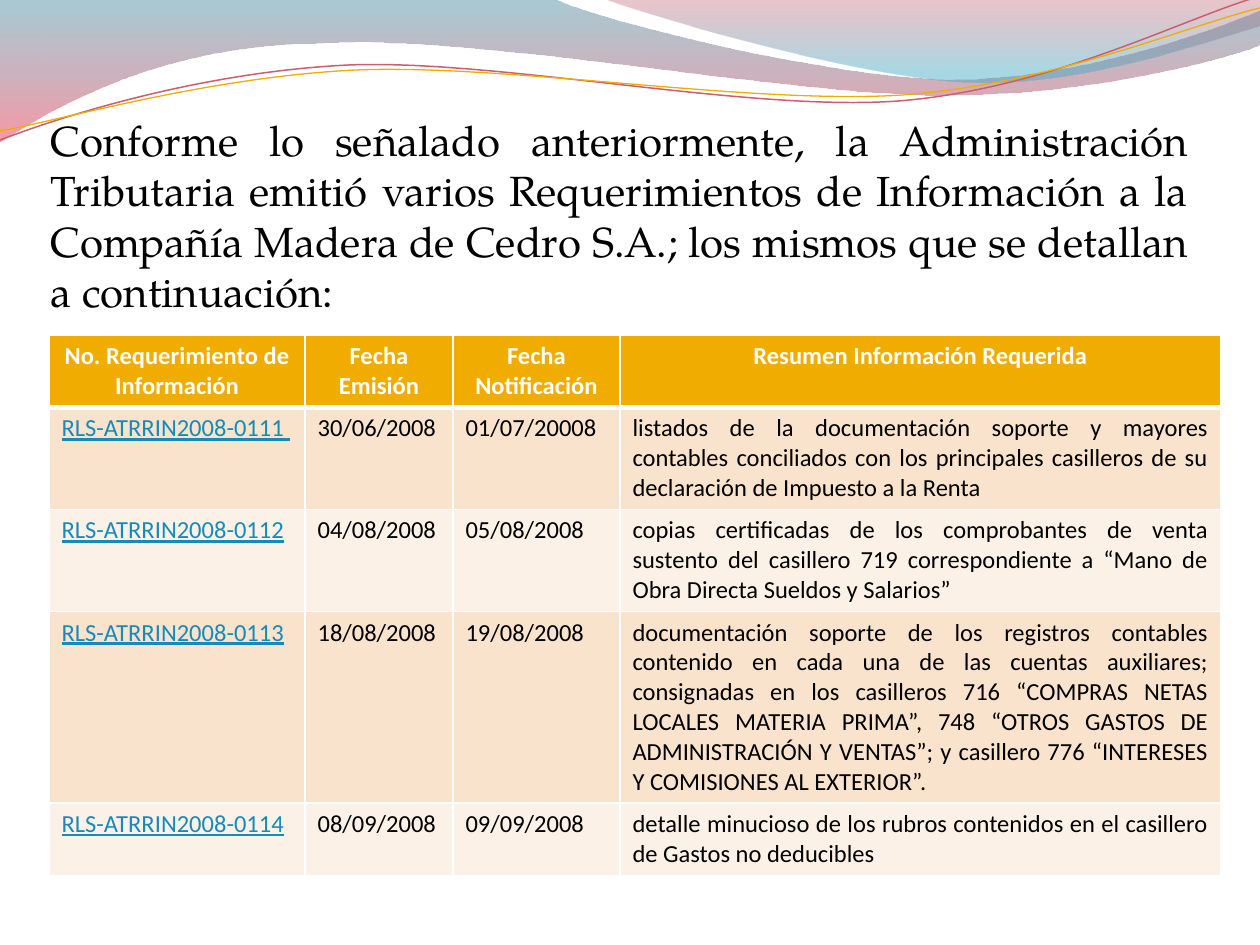
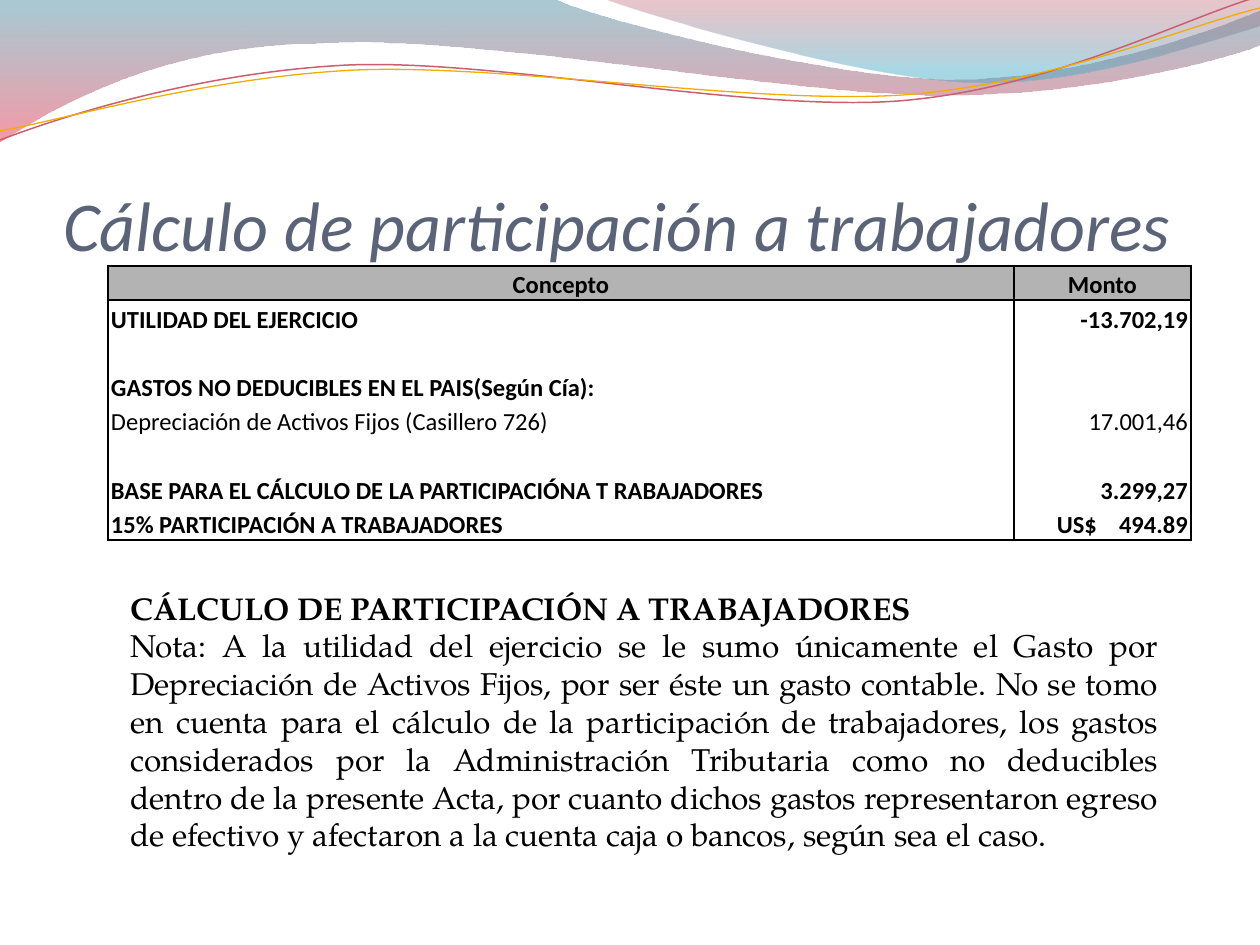
from lxml.etree import SubElement as Sub
from pptx import Presentation
from pptx.dml.color import RGBColor as Rgb
from pptx.enum.text import MSO_ANCHOR as Anc, MSO_AUTO_SIZE as Auto, PP_ALIGN as Al
from pptx.oxml.ns import qn
from pptx.util import Pt

PX = 914400 / 126
SANS, SERIF = "Calibri", "TeX Gyre Pagella"
HUES = {
    "black": "000000", "white": "FFFFFF", "slate": "5A6378", "gold": "F0AD00",
    "rose": "CB5F6E", "link": "168BBA", "odd": "F9E3CC", "even": "FCF1E7",
    "gray": "B3B3B3", "teal": "3F8A9F", "coral": "EF445B", "wine": "B84253",
    "aqua": "42ABC7",
}

# Waves: a pair is a straight step, six numbers are a curve
BANDS = [
    ([(0, -1), (554, -1), (600, 21, 837, 79, 955, 79), (1075, 79, 1207, 33, 1260, 11),
      (1261, 45), (1238, 55, 1096, 96, 940, 95), (784, 95, 481, 35, 324, 43),
      (163, 44, 58, 105, -1, 142)],
     [(0, "teal", 45), (1, "coral", 55)]),
    ([(604, -1), (641, 14, 859, 78, 969, 82), (1079, 87, 1211, 40, 1260, 26), (1260, 0)],
     [(0, "wine", 30), (0.8, "aqua", 45)]),
]
LINES = [
    ([(0, 140), (60, 117, 199, 72, 349, 65), (498, 59, 747, 112, 898, 101),
      (1050, 89, 1182, 19, 1257, -3)], "rose", 0.85),
    ([(0, 131), (59, 121, 207, 77, 357, 70), (508, 64, 752, 105, 903, 95),
      (1053, 84, 1186, 26, 1260, 8)], "gold", 0.75),
]

# Slide 1: requests for information
INTRO = ("Conforme lo señalado anteriormente, la Administración Tributaria emitió varios "
         "Requerimientos de Información a la Compañía Madera de Cedro S.A.; los mismos "
         "que se detallan a continuación:")
ASKS = [
    ("No. Requerimiento de Información", "Fecha Emisión", "Fecha Notificación",
     "Resumen Información Requerida"),
    ("RLS-ATRRIN2008-0111 ", "30/06/2008", "01/07/20008",
     "listados de la documentación soporte y mayores contables conciliados con los "
     "principales casilleros de su declaración de Impuesto a la Renta"),
    ("RLS-ATRRIN2008-0112", "04/08/2008", "05/08/2008",
     "copias certificadas de los comprobantes de venta sustento del casillero 719 "
     "correspondiente a “Mano de Obra Directa Sueldos y Salarios”"),
    ("RLS-ATRRIN2008-0113", "18/08/2008", "19/08/2008",
     "documentación soporte de los registros contables contenido en cada una de las "
     "cuentas auxiliares; consignadas en los casilleros 716 “COMPRAS NETAS LOCALES "
     "MATERIA PRIMA”, 748 “OTROS GASTOS DE ADMINISTRACIÓN Y VENTAS”; y casillero 776 "
     "“INTERESES Y COMISIONES AL EXTERIOR”."),
    ("RLS-ATRRIN2008-0114", "08/09/2008", "09/09/2008",
     "detalle minucioso de los rubros contenidos en el casillero de Gastos no deducibles"),
]

# Slide 2: workers' share
TITLE = "Cálculo de participación a trabajadores"
SUMS = [
    ("Concepto", "Monto"),
    ("UTILIDAD DEL EJERCICIO", "-13.702,19"),
    ("", ""),
    ("GASTOS NO DEDUCIBLES EN EL PAIS(Según Cía):", ""),
    ("Depreciación de Activos Fijos (Casillero 726)", "17.001,46"),
    ("", ""),
    ("BASE PARA EL CÁLCULO DE LA PARTICIPACIÓNA T RABAJADORES", "3.299,27"),
    ("15% PARTICIPACIÓN A TRABAJADORES", "US$    494.89"),
]
PLAIN = 4
HEAD = "CÁLCULO DE PARTICIPACIÓN A TRABAJADORES"
NOTE = ("Nota: A la utilidad del ejercicio se le sumo únicamente el Gasto por Depreciación "
        "de Activos Fijos, por ser éste un gasto contable. No se tomo en cuenta para el "
        "cálculo de la participación de trabajadores, los gastos considerados por la "
        "Administración Tributaria como no deducibles dentro de la presente Acta, por "
        "cuanto dichos gastos representaron egreso de efectivo y afectaron a la cuenta "
        "caja o bancos, según sea el caso.")


def emu(*nums):
    return [round(n * PX) for n in nums]


def hue(name):
    return Rgb.from_string(HUES[name])


def put(para, text, size=14, font=SANS, color="black", bold=False, ital=False,
        line=False, align=Al.LEFT, lead=None):
    para.alignment = align
    if lead:
        para.line_spacing = lead
    if not text:
        Sub(para._p, qn("a:endParaRPr"), sz=str(size * 100))
        return
    run = para.add_run()
    run.text = text
    face = run.font
    face.size, face.name, face.color.rgb = Pt(size), font, hue(color)
    face.bold, face.italic, face.underline = bold, ital, line


def place(shape, *box):
    shape.left, shape.top, shape.width, shape.height = emu(*box)
    frame = shape.text_frame
    frame.word_wrap, frame.auto_size = True, Auto.NONE
    return frame


# Shared waves
def wave(slide, steps, close):
    dots = [emu(*step[i:i + 2]) for step in steps for i in range(0, len(step), 2)]
    pen = slide.shapes.build_freeform(*dots[0])
    pen.add_line_segments(dots[1:], close=close)
    shape = pen.convert_to_shape()
    shape.shadow.inherit = False
    # Join the three points of each curved step into one Bézier segment
    legs = iter(list(shape.element.iter(qn("a:lnTo"))))
    for step in steps[1:]:
        leg = next(legs)
        if len(step) == 6:
            leg.tag = qn("a:cubicBezTo")
            for _ in range(2):
                spare = next(legs)
                leg.append(spare[0])
                spare.getparent().remove(spare)
    return shape


def band(slide, steps, stops):
    shape = wave(slide, steps, True)
    shape.line.fill.background()
    shape.fill.gradient()
    shape.fill.gradient_angle = 270
    for stop, (pos, name, _) in zip(shape.fill.gradient_stops, stops):
        stop.position, stop.color.rgb = pos, hue(name)
    for tint, (_, _, part) in zip(shape.element.iter(qn("a:srgbClr")), stops):
        Sub(tint, qn("a:alpha"), val=str(part * 1000))
    return shape


def curve(slide, steps, name, width):
    shape = wave(slide, steps, False)
    shape.fill.background()
    shape.line.color.rgb, shape.line.width = hue(name), Pt(width)
    return shape


def dress(master, slide):
    parts = [band(slide, *b) for b in BANDS] + [curve(slide, *c) for c in LINES]
    for i, part in enumerate(parts):
        part.element.nvSpPr.cNvPr.set("id", str(20 + i))
        master.shapes.element.insert(2 + i, part.element)


# Tables
def grid(slide, rows, left, top, cols, highs):
    box = emu(left, top, sum(cols), sum(highs))
    table = slide.shapes.add_table(len(rows), len(cols), *box).table
    for col, wide in zip(table.columns, emu(*cols)):
        col.width = wide
    for row, high in zip(table.rows, emu(*highs)):
        row.height = high
    return table


def edge(cell, color, **sides):
    tc = cell._tc.get_or_add_tcPr()
    for side in "LRTB":
        width = sides.get(side, 0)
        line = Sub(tc, qn("a:ln" + side), w=str(Pt(width)))
        if width:
            fill = Sub(line, qn("a:solidFill"))
            Sub(fill, qn("a:srgbClr"), val=HUES[color])
        else:
            Sub(line, qn("a:noFill"))


def paint(cell, name):
    cell.fill.solid()
    cell.fill.fore_color.rgb = hue(name)


def asks(slide):
    table = grid(slide, ASKS, 49, 335, (256, 148, 167, 601), (72, 102, 102, 191, 72))
    for r, row in enumerate(ASKS):
        for c, text in enumerate(row):
            cell = table.cell(r, c)
            edge(cell, "white", L=1, R=1, T=1, B=1 if r else 3)
            paint(cell, ("odd" if r % 2 else "even") if r else "gold")
            para = cell.text_frame.paragraphs[0]
            if r == 0:
                put(para, text, color="white", bold=True, align=Al.CENTER)
            elif c == 0:
                put(para, text, color="link", line=True)
            else:
                put(para, text, align=Al.JUSTIFY if c == 3 else Al.LEFT)


def sums(slide):
    table = grid(slide, SUMS, 108, 266, (906, 177), [34] * len(SUMS))
    table.first_row = table.horz_banding = False
    last = len(SUMS) - 1
    for r, row in enumerate(SUMS):
        for c, text in enumerate(row):
            cell = table.cell(r, c)
            edge(cell, "black", L=1.5, R=1.5, T=1.5 * (r < 2), B=1.5 * (r in (0, last)))
            cell.margin_left = cell.margin_right = emu(3)[0]
            cell.margin_top = cell.margin_bottom = 0
            if r:
                cell.fill.background()
            else:
                paint(cell, "gray")
            align = (Al.RIGHT if c else Al.LEFT) if r else Al.CENTER
            put(cell.text_frame.paragraphs[0], text, bold=r != PLAIN, align=align, lead=1.15)


def main():
    prs = Presentation()
    prs.slide_width, prs.slide_height = emu(1260, 945)

    # Slide 1
    slide = prs.slides.add_slide(prs.slide_layouts[1])
    dress(prs.slide_master, slide)
    title = slide.shapes.title.element
    title.getparent().remove(title)
    para = place(slide.placeholders[1], 0, 108, 1201, 242).paragraphs[0]
    put(para, INTRO, size=24, font=SERIF, align=Al.JUSTIFY)
    props = para._p.get_or_add_pPr()
    props.set("marL", str(emu(38)[0]))
    props.set("indent", "0")
    Sub(props, qn("a:buNone"))
    asks(slide)

    # Slide 2
    slide = prs.slides.add_slide(prs.slide_layouts[5])
    frame = place(slide.shapes.title, 63, 97, 1134, 169)
    frame.vertical_anchor = Anc.BOTTOM
    frame.margin_left = frame.margin_right = frame.margin_bottom = 0
    put(frame.paragraphs[0], TITLE, size=40, color="slate", ital=True)
    sums(slide)
    box = (118, 581, 1053, 280)
    frame = place(slide.shapes.add_textbox(*emu(*box)), *box)
    frame.vertical_anchor = Anc.MIDDLE
    style = dict(size=18, font=SERIF, align=Al.JUSTIFY)
    put(frame.paragraphs[0], HEAD, bold=True, **style)
    put(frame.add_paragraph(), NOTE, **style)

    prs.save("out.pptx")


if __name__ == "__main__":
    main()
